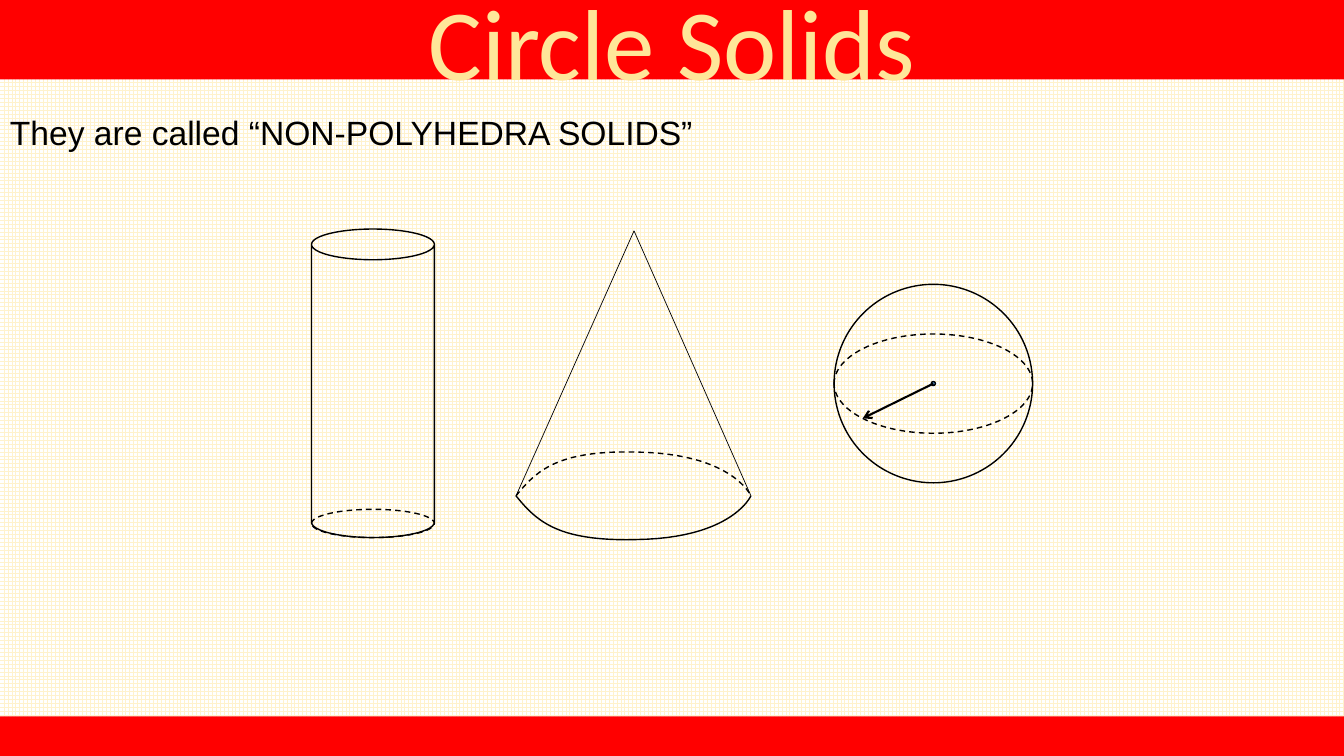
from lxml import etree
from pptx import Presentation
from pptx import util as u
from pptx.dml.color import RGBColor
from pptx.enum import dml, shapes, text
from pptx.oxml.ns import qn

COLORS = {"band": "FF0000", "title": "FFE699", "ink": "000000",
          "grid": "FFF2CC", "paper": "FFFFFF", "centre": "5B9BD5"}
WIDTH, HEIGHT = 960, 540
SHAPE = shapes.MSO_SHAPE


def color(name):
    return RGBColor.from_string(COLORS[name])


def bezier(start, c1, c2, end, steps=24):
    """Points along a cubic curve, without its start."""
    for step in range(1, steps + 1):
        t = step / steps
        s = 1 - t
        yield tuple(s**3 * a + 3 * s * s * t * b + 3 * s * t * t * c + t**3 * d
                    for a, b, c, d in zip(start, c1, c2, end))


class SolidsSlide:
    def __init__(self, deck):
        self.slide = deck.slides.add_slide(deck.slide_layouts[5])
        self.canvas = self.slide.shapes

    def background(self):
        fill = self.slide.background.fill
        fill.patterned()
        fill.pattern = dml.MSO_PATTERN.LARGE_GRID
        fill.fore_color.rgb = color("grid")
        fill.back_color.rgb = color("paper")

    def group(self):
        """Send the following elements into a new group."""
        self.canvas = self.slide.shapes.add_group_shape().shapes

    def words(self, paragraph, wording, size, font, ink):
        run = paragraph.add_run()
        run.text = wording
        run.font.size, run.font.name = u.Pt(size), font
        run.font.color.rgb = color(ink)

    def title(self, wording, height):
        title = self.slide.shapes.title
        title.left, title.top = u.Pt(0), u.Pt(0)
        title.width, title.height = u.Pt(WIDTH), u.Pt(height)
        title.fill.solid()
        title.fill.fore_color.rgb = color("band")
        frame = title.text_frame
        frame.auto_size = text.MSO_AUTO_SIZE.NONE
        frame.vertical_anchor = text.MSO_ANCHOR.MIDDLE
        frame.paragraphs[0].alignment = text.PP_ALIGN.CENTER
        self.words(frame.paragraphs[0], wording, 72, "Calibri", "title")

    def caption(self, wording, left, top, width, height):
        frame = self.canvas.add_textbox(*map(u.Pt, (left, top, width, height))).text_frame
        frame.word_wrap = True
        frame.auto_size = text.MSO_AUTO_SIZE.SHAPE_TO_FIT_TEXT
        self.words(frame.paragraphs[0], wording, 24, "Arial", "ink")

    def outline(self, item, weight=1, dashed=False):
        item.line.color.rgb = color("ink")
        item.line.width = u.Pt(weight)
        if dashed:
            item.line.dash_style = dml.MSO_LINE.DASH

    def shape(self, kind, left, top, width, height, fill=None, lined=True, dashed=False):
        shape = self.canvas.add_shape(kind, *map(u.Pt, (left, top, width, height)))
        shape.shadow.inherit = False
        if fill:
            shape.fill.solid()
            shape.fill.fore_color.rgb = color(fill)
        else:
            shape.fill.background()
        if lined:
            self.outline(shape, dashed=dashed)
        else:
            shape.line.fill.background()

    def ellipse(self, centre, rx, ry, **style):
        x, y = centre
        self.shape(SHAPE.OVAL, x - rx, y - ry, 2 * rx, 2 * ry, **style)

    def line(self, start, end, weight, arrow=False):
        line = self.canvas.add_connector(shapes.MSO_CONNECTOR.STRAIGHT,
                                         *map(u.Pt, (*start, *end)))
        self.outline(line, weight)
        properties = line._element.spPr
        if arrow:
            etree.SubElement(properties.find(qn("a:ln")), qn("a:tailEnd"), type="arrow")
        etree.SubElement(properties, qn("a:effectLst"))

    def curve(self, start, points, dashed):
        builder = self.canvas.build_freeform(*map(u.Pt, start))
        builder.add_line_segments([tuple(map(u.Pt, p)) for p in points], close=False)
        curve = builder.convert_to_shape()
        curve.shadow.inherit = False
        curve.fill.background()
        self.outline(curve, dashed=dashed)

    def cylinder(self, left, top, width, height, rim):
        self.group()
        self.shape(SHAPE.CAN, left, top, width, height)
        self.shape(SHAPE.OVAL, left, top + height - rim, width, rim, dashed=True)

    def cone(self, apex, left, right, base):
        self.group()
        start, end = (left, base), (right, base)
        for corner in (start, end):
            self.line(corner, apex, 0.5)
        for side, dashed in ((1, False), (-1, True)):
            middle = (462.2, base + 31 * side)
            points = [*bezier(start, (384, base + 18.9 * side),
                              (399.6, base + 33.9 * side), middle),
                      *bezier(middle, (524.2, base + 28.1 * side), end, end)]
            self.curve(start, points, dashed)

    def sphere(self, centre, radius, rim_point):
        self.group()
        self.ellipse(centre, radius, radius)
        self.ellipse(centre, radius, radius / 2, dashed=True)
        self.ellipse(centre, 1.45, 1.45, fill="centre")
        self.line(centre, rim_point, 1.5, arrow=True)


def main():
    deck = Presentation()
    deck.slide_width, deck.slide_height = u.Pt(WIDTH), u.Pt(HEIGHT)
    page = SolidsSlide(deck)
    page.background()
    page.title("Circle Solids", 56.7)
    page.caption("They are called “NON-POLYHEDRA SOLIDS”", 0, 76.3, 692.6, 36)
    footer = 28.3
    page.shape(SHAPE.RECTANGLE, 0, HEIGHT - footer, WIDTH, footer, fill="band", lined=False)
    page.cylinder(222.5, 163.6, 87.8, 220.4, 20.2)
    page.cone((452.9, 164.9), 368.6, 536.4, 354.2)
    page.sphere((666.7, 274), 70.9, (616.3, 298.8))
    deck.save("out.pptx")


if __name__ == "__main__":
    main()
